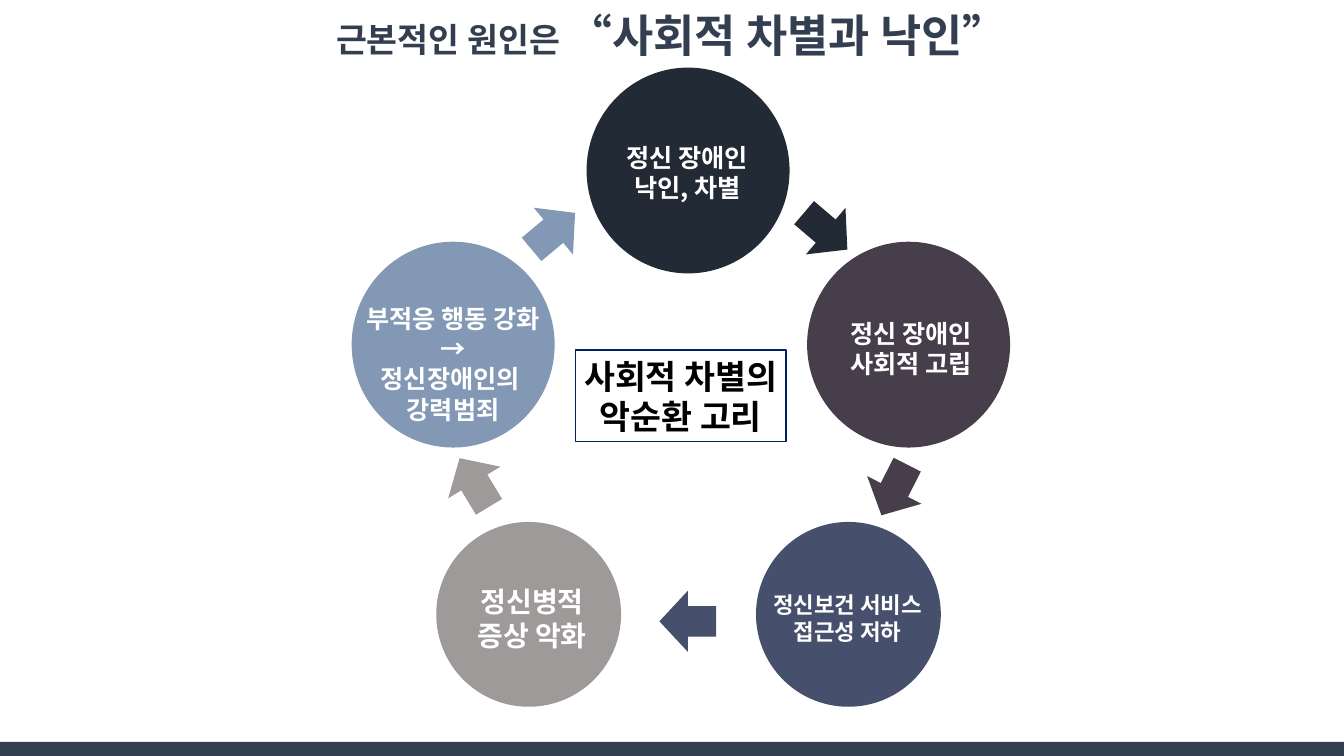
from dataclasses import dataclass

from lxml import etree
from pptx import Presentation
from pptx.dml.color import RGBColor
from pptx.enum import shapes, text
from pptx.oxml.ns import qn
from pptx.util import Pt


@dataclass(frozen=True)
class Theme:
    font: str = "Noto Sans CJK KR"
    slate: str = "333F50"
    navy: str = "222A35"
    plum: str = "473E4B"
    indigo: str = "464F6B"
    grey: str = "9E9A99"
    blue: str = "8298B5"
    frame: str = "002060"
    white: str = "FFFFFF"
    black: str = "000000"
    headline: int = 32
    heading: int = 24
    large: int = 20
    body: int = 18
    small: int = 16


@dataclass(frozen=True)
class Stage:
    color: str
    circle: tuple  # left, top, width, height
    label: tuple
    size: int
    lines: tuple
    arrow: tuple  # left, top, rotation


THEME = Theme()
SLIDE_WIDTH, SLIDE_HEIGHT = 960, 540
BAR_HEIGHT = 10
ARROW_SIZE = (40.6, 43.6)
UPPER, LOWER = (145, 147), (132, 132)  # circle sizes

# Clockwise from the top; each arrow leads to the next stage
STAGES = (
    Stage(THEME.navy, (419, 48.3, *UPPER), (420.5, 98, 141, 51), THEME.body,
          ("정신 장애인", "낙인, 차별"), (569.5, 143.3, 40.4)),
    Stage(THEME.plum, (576.5, 172.7, *UPPER), (580.3, 224, 141, 51), THEME.body,
          ("정신 장애인", "사회적 고립"), (618.5, 328.2, 117)),
    Stage(THEME.indigo, (540, 372.8, *LOWER), (535, 419, 141, 46), THEME.small,
          ("정신보건 서비스 접근성 저하",), (471, 422, 180)),
    Stage(THEME.grey, (311.6, 372.8, *LOWER), (309.6, 414, 141, 55.5), THEME.large,
          ("정신병적", "증상 악화"), (318.5, 322.8, 238.8)),
    Stage(THEME.blue, (251.2, 172.7, *UPPER), (251.2, 213, 145, 94.5), THEME.body,
          ("부적응 행동 강화", "→", "정신장애인의 ", "강력범죄"), (375, 143.3, 320)),
)


def points(*lengths):
    return [Pt(length) for length in lengths]


def style(para, size, color):
    """Set one bold, centred style for a whole paragraph."""
    para.alignment = text.PP_ALIGN.CENTER
    font = para.font
    font.size, font.bold, font.name = Pt(size), True, THEME.font
    font.color.rgb = RGBColor.from_string(color)
    # Hangul takes its typeface from the East Asian font slot
    latin = para._p.find(".//" + qn("a:latin"))
    east_asian = etree.Element(qn("a:ea"), typeface=THEME.font)
    latin.addnext(east_asian)


def write_lines(frame, lines, size, color):
    for index, line in enumerate(lines):
        para = frame.add_paragraph() if index else frame.paragraphs[0]
        para.add_run().text = line
        style(para, size, color)


def add_title(page, lead, emphasis):
    title = page.shapes.title
    title.left, title.top, title.width, title.height = points(0, 2, SLIDE_WIDTH, 46)
    title.text_frame.vertical_anchor = text.MSO_ANCHOR.TOP
    title.text_frame.auto_size = text.MSO_AUTO_SIZE.NONE
    para = title.text_frame.paragraphs[0]
    para.add_run().text = lead
    span = para.add_run()
    span.text = emphasis
    span.font.size = Pt(THEME.headline)
    style(para, THEME.heading, THEME.slate)


def add_solid(page, kind, place, color, rotation=0):
    shape = page.shapes.add_shape(kind, *points(*place))
    shape.shadow.inherit = False
    shape.fill.solid()
    shape.fill.fore_color.rgb = RGBColor.from_string(color)
    shape.line.fill.background()
    shape.rotation = rotation


def add_label(page, place, lines, size):
    box = page.shapes.add_textbox(*points(*place))
    box.text_frame.word_wrap = True
    box.text_frame.auto_size = text.MSO_AUTO_SIZE.SHAPE_TO_FIT_TEXT
    write_lines(box.text_frame, lines, size, THEME.white)


def add_stage(page, stage):
    add_solid(page, shapes.MSO_SHAPE.OVAL, stage.circle, stage.color)
    left, top, rotation = stage.arrow
    add_solid(page, shapes.MSO_SHAPE.RIGHT_ARROW, (left, top, *ARROW_SIZE),
              stage.color, rotation)
    add_label(page, stage.label, stage.lines, stage.size)


def add_framed_text(page, place, lines):
    box = page.shapes.add_shape(shapes.MSO_SHAPE.RECTANGLE, *points(*place))
    box.shadow.inherit = False
    box.fill.background()
    box.line.color.rgb = RGBColor.from_string(THEME.frame)
    box.line.width = Pt(1)
    box.text_frame.word_wrap = False
    box.text_frame.vertical_anchor = text.MSO_ANCHOR.MIDDLE
    write_lines(box.text_frame, lines, THEME.heading, THEME.black)


def main():
    deck = Presentation()
    deck.slide_width, deck.slide_height = points(SLIDE_WIDTH, SLIDE_HEIGHT)
    title_only = deck.slide_layouts.get_by_name("Title Only")
    page = deck.slides.add_slide(title_only)

    # Title and footer bar
    add_title(page, "근본적인 원인은 ", "“사회적 차별과 낙인”")
    bar = (0, SLIDE_HEIGHT - BAR_HEIGHT, SLIDE_WIDTH, BAR_HEIGHT)
    add_solid(page, shapes.MSO_SHAPE.RECTANGLE, bar, THEME.slate)

    # Cycle of five stages around its name
    for stage in STAGES:
        add_stage(page, stage)
    add_framed_text(page, (411, 250, 150.5, 65.5), ("사회적 차별의", "악순환 고리"))

    deck.save("out.pptx")


if __name__ == "__main__":
    main()
